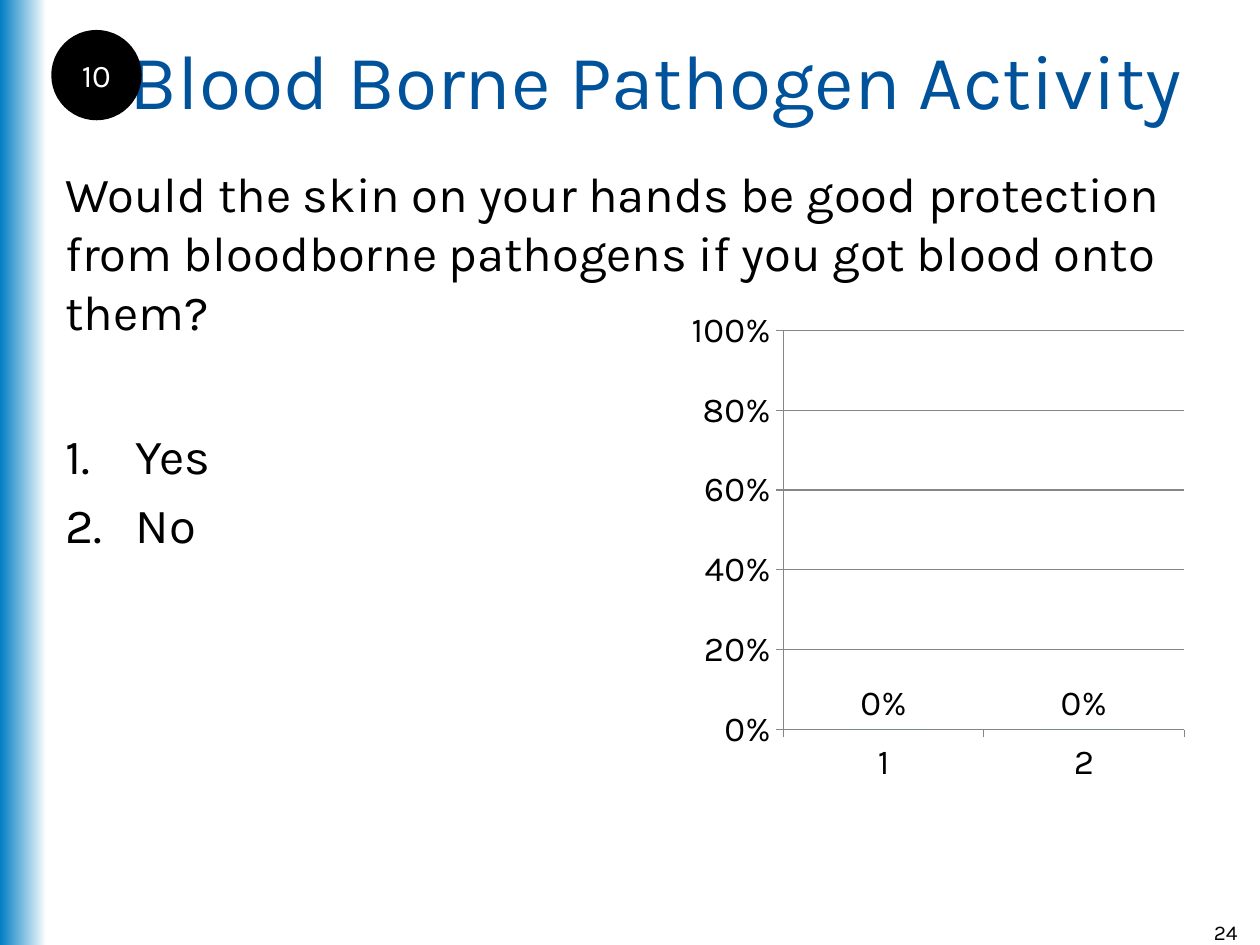
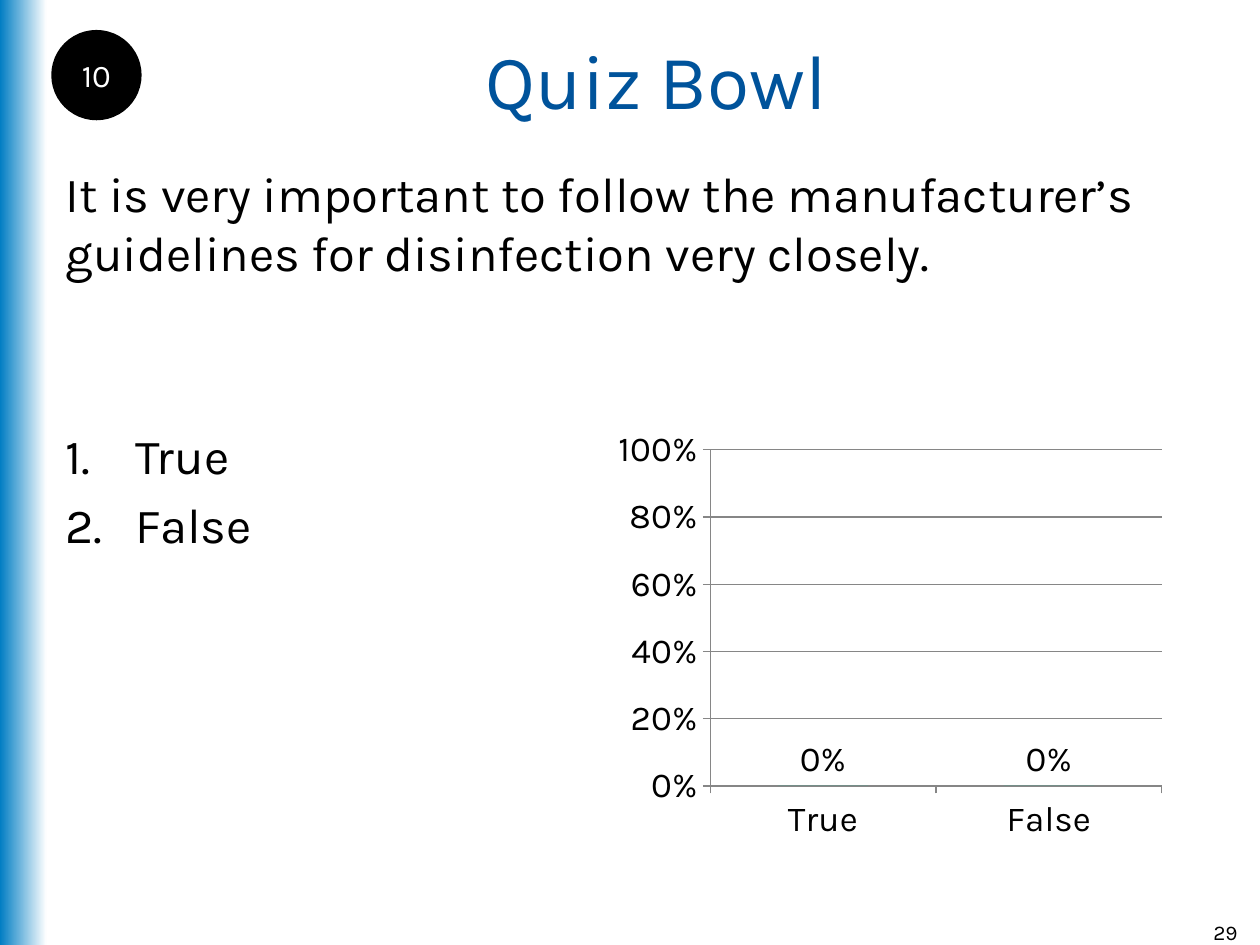
import pptx
import pptx.chart.data
import pptx.dml.color
import pptx.enum.chart
import pptx.enum.shapes
import pptx.enum.text
import pptx.oxml
import pptx.oxml.ns
import pptx.util
from pptx.util import Cm

RGBColor = pptx.dml.color.RGBColor
BAND_BLUE = RGBColor(0x00, 0x7D, 0xC3)
TITLE_BLUE = RGBColor(0x00, 0x53, 0x9B)
BAR_GREEN = RGBColor(0x00, 0xCC, 0x99)
AXIS_GRAY = RGBColor(0x86, 0x86, 0x86)
BLACK = RGBColor(0x00, 0x00, 0x00)
WHITE = RGBColor(0xFF, 0xFF, 0xFF)

FONT = "Karla"
LEFT = Cm(1.07)
COLUMN_WIDTH = Cm(11.38)
ALIGN = pptx.enum.text.PP_ALIGN
ANCHOR = pptx.enum.text.MSO_ANCHOR

TITLE = {"size": 44, "color": TITLE_BLUE}
BODY = {"size": 28, "color": BLACK}
PAGE_NUMBER = {"size": 12, "color": BLACK}
COUNTDOWN = {"size": 18, "color": WHITE}
CHART_TEXT = {"size": 20, "color": BLACK}


def set_attributes(target, values):
    for name, value in values.items():
        setattr(target, name, value)


def style_font(font, style):
    set_attributes(font, {"name": FONT, "size": pptx.util.Pt(style["size"])})
    font.color.rgb = style["color"]


def write_paragraph(paragraph, text, style, align=ALIGN.LEFT):
    paragraph.alignment = align
    run = paragraph.add_run()
    run.text = text
    style_font(run.font, style)


def add_text(slide, box, lines, style, align=ALIGN.LEFT, anchor=ANCHOR.TOP, numbered=False):
    frame = slide.shapes.add_textbox(*box).text_frame
    set_attributes(frame, {"word_wrap": True, "vertical_anchor": anchor})
    for index, line in enumerate(lines):
        paragraph = frame.add_paragraph() if index else frame.paragraphs[0]
        if numbered:
            number_paragraph(paragraph)
        if index:
            paragraph.space_before = pptx.util.Pt(style["size"] * 0.2)
        write_paragraph(paragraph, line, style, align)


def number_paragraph(paragraph):
    properties = paragraph._p.get_or_add_pPr()
    properties.set("marL", str(Cm(1.42)))
    properties.set("indent", str(Cm(-1.42)))
    properties.append(pptx.oxml.parse_xml(
        f'<a:buAutoNum {pptx.oxml.ns.nsdecls("a")} type="arabicPeriod"/>'))


def add_band(slide, height):
    band = slide.shapes.add_shape(
        pptx.enum.shapes.MSO_SHAPE.RECTANGLE, 0, 0, Cm(0.94), height)
    band.shadow.inherit = False
    band.line.fill.background()
    band.fill.gradient()
    band.fill.gradient_angle = 0
    for stop, color in zip(band.fill.gradient_stops, (BAND_BLUE, WHITE)):
        stop.color.rgb = color


def add_countdown(slide, seconds):
    circle = slide.shapes.add_shape(
        pptx.enum.shapes.MSO_SHAPE.OVAL, LEFT, Cm(0.64), Cm(1.75), Cm(1.75))
    circle.shadow.inherit = False
    circle.fill.solid()
    circle.fill.fore_color.rgb = BLACK
    circle.line.color.rgb = BLACK
    circle.line.width = pptx.util.Pt(2)
    frame = circle.text_frame
    set_attributes(frame, {
        "margin_left": 0, "margin_right": 0, "margin_top": 0, "margin_bottom": 0,
        "word_wrap": False, "vertical_anchor": ANCHOR.MIDDLE})
    write_paragraph(frame.paragraphs[0], seconds, COUNTDOWN, ALIGN.CENTER)


def place_plot(chart, plot_box):
    plot_area = chart._chartSpace.chart.plotArea
    for layout in plot_area.findall(pptx.oxml.ns.qn("c:layout")):
        plot_area.remove(layout)
    sizes = "".join(f'<c:{name} val="{value}"/>' for name, value in zip("xywh", plot_box))
    plot_area.insert(0, pptx.oxml.parse_xml(
        f'<c:layout {pptx.oxml.ns.nsdecls("c")}><c:manualLayout>'
        '<c:layoutTarget val="inner"/><c:xMode val="edge"/><c:yMode val="edge"/>'
        f'{sizes}</c:manualLayout></c:layout>'))


def add_vote_chart(slide, box, categories, plot_box):
    data = pptx.chart.data.CategoryChartData(number_format="0%")
    data.categories = categories
    data.add_series("Series 1", [0] * len(categories))
    chart = slide.shapes.add_chart(
        pptx.enum.chart.XL_CHART_TYPE.COLUMN_CLUSTERED, *box, data).chart
    set_attributes(chart, {"has_legend": False, "has_title": False})
    style_font(chart.font, CHART_TEXT)

    plot = chart.plots[0]
    set_attributes(plot, {
        "gap_width": 150, "vary_by_categories": False, "has_data_labels": True})
    set_attributes(plot.data_labels, {
        "show_value": True, "number_format": "0%", "number_format_is_linked": False,
        "position": pptx.enum.chart.XL_LABEL_POSITION.OUTSIDE_END})
    fill = plot.series[0].format.fill
    fill.solid()
    fill.fore_color.rgb = BAR_GREEN

    values = chart.value_axis
    set_attributes(values, {
        "minimum_scale": 0, "maximum_scale": 1, "major_unit": 0.2,
        "has_major_gridlines": True})
    set_attributes(values.tick_labels, {
        "number_format": "0%", "number_format_is_linked": False})
    values.major_gridlines.format.line.color.rgb = AXIS_GRAY
    for axis in (values, chart.category_axis):
        axis.major_tick_mark = pptx.enum.chart.XL_TICK_MARK.OUTSIDE
        axis.format.line.color.rgb = AXIS_GRAY
    place_plot(chart, plot_box)


def add_question_slide(presentation, title, page, question, answers,
                       chart_box, categories, plot_box):
    slide = presentation.slides.add_slide(presentation.slide_layouts[6])
    add_band(slide, presentation.slide_height)
    add_text(slide, (LEFT, 0, Cm(24.33), Cm(3.18)), [title], TITLE,
             ALIGN.CENTER, ANCHOR.MIDDLE)
    add_text(slide, (Cm(23.93), Cm(18.42), Cm(1.27), Cm(0.64)), [page],
             PAGE_NUMBER, ALIGN.RIGHT)
    add_text(slide, (LEFT, Cm(3.17), Cm(23.29), Cm(1.9)), [question], BODY)
    add_text(slide, (LEFT, Cm(8.46), COLUMN_WIDTH, Cm(10.59)), answers, BODY,
             numbered=True)
    add_vote_chart(slide, chart_box, categories, plot_box)
    add_countdown(slide, "10")


def main():
    presentation = pptx.Presentation()
    set_attributes(presentation, {"slide_width": Cm(25.4), "slide_height": Cm(19.05)})
    add_question_slide(
        presentation, "Blood Borne Pathogen Activity", "24",
        "Would the skin on your hands be good protection from bloodborne "
        "pathogens if you got blood onto them?",
        ["Yes", "No"],
        (Cm(12.95), Cm(5.92), COLUMN_WIDTH, Cm(10.59)),
        ["1", "2"], (0.25, 0.07, 0.71, 0.76))
    add_question_slide(
        presentation, "Quiz Bowl", "29",
        "It is very important to follow the manufacturer’s guidelines for "
        "disinfection very closely.",
        ["True", "False"],
        (Cm(12.27), Cm(8.46), COLUMN_WIDTH, Cm(8.69)),
        ["True", "False"], (0.18, 0.07, 0.8, 0.78))
    presentation.save("out.pptx")


if __name__ == "__main__":
    main()
